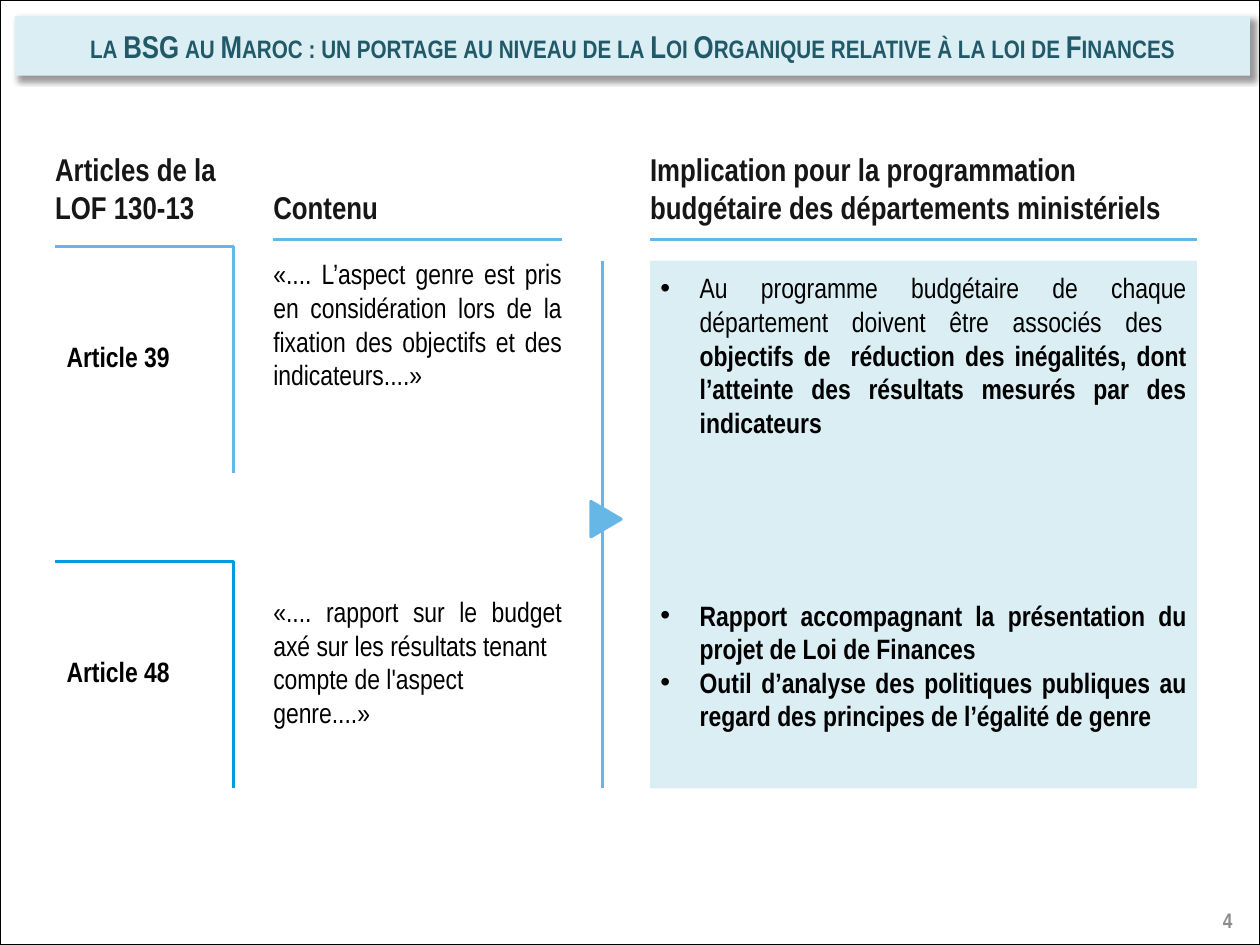
from dataclasses import dataclass

from lxml import etree
from pptx import Presentation
from pptx.dml.color import RGBColor
from pptx.enum.shapes import MSO_CONNECTOR, MSO_SHAPE
from pptx.enum.text import MSO_ANCHOR, MSO_AUTO_SIZE, PP_ALIGN
from pptx.oxml import parse_xml
from pptx.oxml.ns import nsdecls, qn
from pptx.util import Pt

STRAIGHT = MSO_CONNECTOR.STRAIGHT
RECTANGLE, TRIANGLE = MSO_SHAPE.RECTANGLE, MSO_SHAPE.ISOSCELES_TRIANGLE
TOP, MIDDLE, BOTTOM = MSO_ANCHOR.TOP, MSO_ANCHOR.MIDDLE, MSO_ANCHOR.BOTTOM
LEFT, CENTER, RIGHT, JUSTIFY = PP_ALIGN.LEFT, PP_ALIGN.CENTER, PP_ALIGN.RIGHT, PP_ALIGN.JUSTIFY
NO_AUTOFIT = MSO_AUTO_SIZE.NONE


@dataclass(frozen=True)
class Theme:
    font: str = "Arial Narrow"
    ink: str = "000000"
    heading_ink: str = "161616"
    title_ink: str = "215968"
    number_ink: str = "8C8C8C"
    panel: str = "DBEEF4"
    sky: str = "67B7E6"
    azure: str = "009DDC"
    heading_size: float = 18
    body_size: float = 16
    number_size: float = 12
    rule_width: float = 1.5
    accent_width: float = 1.75
    frame_width: float = 0.75


class SlideBuilder:
    def __init__(self, slide, theme):
        self.slide = slide
        self.theme = theme

    def place(self, shape, box):
        shape.left, shape.top, shape.width, shape.height = map(Pt, box)

    def stroke(self, line, color, width):
        line.color.rgb = RGBColor.from_string(color)
        line.width = Pt(width)

    def fill(self, shape, color):
        shape.fill.solid()
        shape.fill.fore_color.rgb = RGBColor.from_string(color)

    def frame(self, shape, margins, anchor):
        frame = shape.text_frame
        frame.word_wrap = True
        frame.auto_size = NO_AUTOFIT
        frame.vertical_anchor = anchor
        (frame.margin_left, frame.margin_top,
         frame.margin_right, frame.margin_bottom) = map(Pt, margins)
        return frame

    def paragraph(self, frame, runs, size, color, align=LEFT, space_before=0):
        first = frame.paragraphs[0]
        paragraph = frame.add_paragraph() if first.runs else first
        paragraph.alignment = align
        paragraph.space_before = Pt(space_before)
        for text, bold in runs:
            run = paragraph.add_run()
            run.text = text
            run.font.name = self.theme.font
            run.font.size = Pt(size)
            run.font.bold = bold
            run.font.color.rgb = RGBColor.from_string(color)
        return paragraph

    def text(self, box, paragraphs, size, color, margins=(7.2, 3.6, 7.2, 3.6), anchor=TOP):
        frame = self.frame(self.slide.shapes.add_textbox(*map(Pt, box)), margins, anchor)
        for runs, align in paragraphs:
            self.paragraph(frame, runs, size, color, align)

    def heading(self, box, text):
        self.text(box, [([(text, True)], LEFT)], self.theme.heading_size,
                  self.theme.heading_ink, (0, 0, 0, 0), BOTTOM)

    def line(self, start, end, width):
        connector = self.slide.shapes.add_connector(STRAIGHT, *map(Pt, start + end))
        self.stroke(connector.line, self.theme.sky, width)
        etree.SubElement(connector._element.spPr, qn("a:effectLst"))

    def shape(self, kind, box, line_color, line_width, fill=None, rotation=0):
        shape = self.slide.shapes.add_shape(kind, *map(Pt, box))
        shape.shadow.inherit = False
        shape.rotation = rotation
        self.stroke(shape.line, line_color, line_width)
        if fill:
            self.fill(shape, fill)
        else:
            shape.fill.background()

    def bracket(self, left, top, width, height, color):
        outline = self.slide.shapes.build_freeform(Pt(left), Pt(top))
        corner = (Pt(left + width), Pt(top))
        outline.add_line_segments([corner, (Pt(left + width), Pt(top + height))], close=False)
        bracket = outline.convert_to_shape()
        bracket.shadow.inherit = False
        bracket.fill.background()
        self.stroke(bracket.line, color, self.theme.accent_width)

    def title(self, box, text):
        title = self.slide.shapes.title
        self.place(title, box)
        title._element.spPr.insert(1, parse_xml(
            f'<a:prstGeom {nsdecls("a")} prst="snip2DiagRect"><a:avLst/></a:prstGeom>'))
        self.fill(title, self.theme.panel)
        title._element.spPr.append(parse_xml(
            f'<a:effectLst {nsdecls("a")}><a:outerShdw blurRad="{Pt(4)}" dist="{Pt(3)}" '
            'dir="2700000" algn="tl" rotWithShape="0"><a:srgbClr val="000000">'
            '<a:alpha val="40000"/></a:srgbClr></a:outerShdw></a:effectLst>'))
        frame = self.frame(title, (7.2, 3.6, 7.2, 3.6), MIDDLE)
        paragraph = self.paragraph(frame, [(text, True)], self.theme.heading_size,
                                   self.theme.title_ink, CENTER)
        for run in paragraph.runs:
            run.font._element.set("cap", "small")

    def bullets(self, box, items, indent):
        body = self.slide.placeholders[1]
        self.place(body, box)
        self.fill(body, self.theme.panel)
        frame = self.frame(body, (5.8, 5.8, 5.8, 0), TOP)
        for runs, space_before in items:
            paragraph = self.paragraph(frame, runs, self.theme.body_size, self.theme.ink,
                                       JUSTIFY, space_before)
            properties = paragraph._p.get_or_add_pPr()
            properties.set("marL", str(Pt(indent)))
            properties.set("indent", str(-Pt(indent)))


def main():
    presentation = Presentation()
    presentation.slide_width, presentation.slide_height = Pt(720), Pt(540)
    theme = Theme()
    builder = SlideBuilder(
        presentation.slides.add_slide(presentation.slide_layouts[1]), theme)

    article_left, content_left, implication_left = 31.5, 156.2, 371.5
    content_width, implication_width = 165, 312.5
    heading_top, heading_height, rule_top = 85, 44, 136.8
    panel_top, panel_bottom = 149, 450.5
    divider_x = 344.2

    builder.shape(RECTANGLE, (0, 0, 720, 540), theme.ink, theme.frame_width)
    builder.title(
        (8.5, 9.2, 705.7, 34),
        "la BSG au Maroc : un portage au niveau de la Loi Organique relative à la loi de Finances")

    for left, width, text in (
        (article_left, 101.5, "Articles de la LOF 130-13"),
        (content_left, content_width, "Contenu"),
        (implication_left, implication_width,
         "Implication pour la programmation budgétaire des départements ministériels"),
    ):
        builder.heading((left, heading_top, width, heading_height), text)
    for left, width in ((content_left, content_width), (implication_left, implication_width)):
        builder.line((left, rule_top), (left + width, rule_top), theme.rule_width)

    articles = (
        ("Article 39", 141, theme.sky, 141, [
            ("«.... L’aspect genre est pris en considération lors de la fixation "
             "des objectifs et des indicateurs....»", JUSTIFY)]),
        ("Article 48", 320.8, theme.azure, 334, [
            ("«.... rapport sur le budget axé sur les résultats tenant", JUSTIFY),
            ("compte de l'aspect genre....»", LEFT)]),
    )
    for label, top, color, content_top, content in articles:
        builder.bracket(article_left, top, 101.8, 129.5, color)
        builder.text((31, top + 49.5, 90.7, 26.6), [([(label, True)], LEFT)],
                     theme.body_size, theme.ink)
        builder.text((content_left, content_top, content_width, 83.5),
                     [([(text, False)], align) for text, align in content],
                     theme.body_size, theme.ink, (0, 5.8, 0, 0))

    builder.line((divider_x, panel_bottom), (divider_x, panel_top), theme.accent_width)
    builder.shape(TRIANGLE, (336.2, 288, 20.2, 17.3), theme.sky, theme.accent_width,
                  theme.sky, 90)

    builder.bullets(
        (implication_left, panel_top, implication_width, panel_bottom - panel_top),
        (
            ([("Au programme budgétaire de chaque département doivent être associés des  ", False),
              ("objectifs de  réduction des inégalités, dont l’atteinte des résultats "
               "mesurés par des indicateurs", True)], 0),
            ([("Rapport accompagnant la présentation du projet de Loi de Finances", True)], 91),
            ([("Outil d’analyse des politiques publiques au regard des principes "
               "de l’égalité de genre", True)], 0),
        ),
        22.5)

    builder.text((543.6, 512, 167.8, 28), [([("4", True)], RIGHT)],
                 theme.number_size, theme.number_ink, anchor=MIDDLE)
    presentation.save("out.pptx")


if __name__ == "__main__":
    main()
